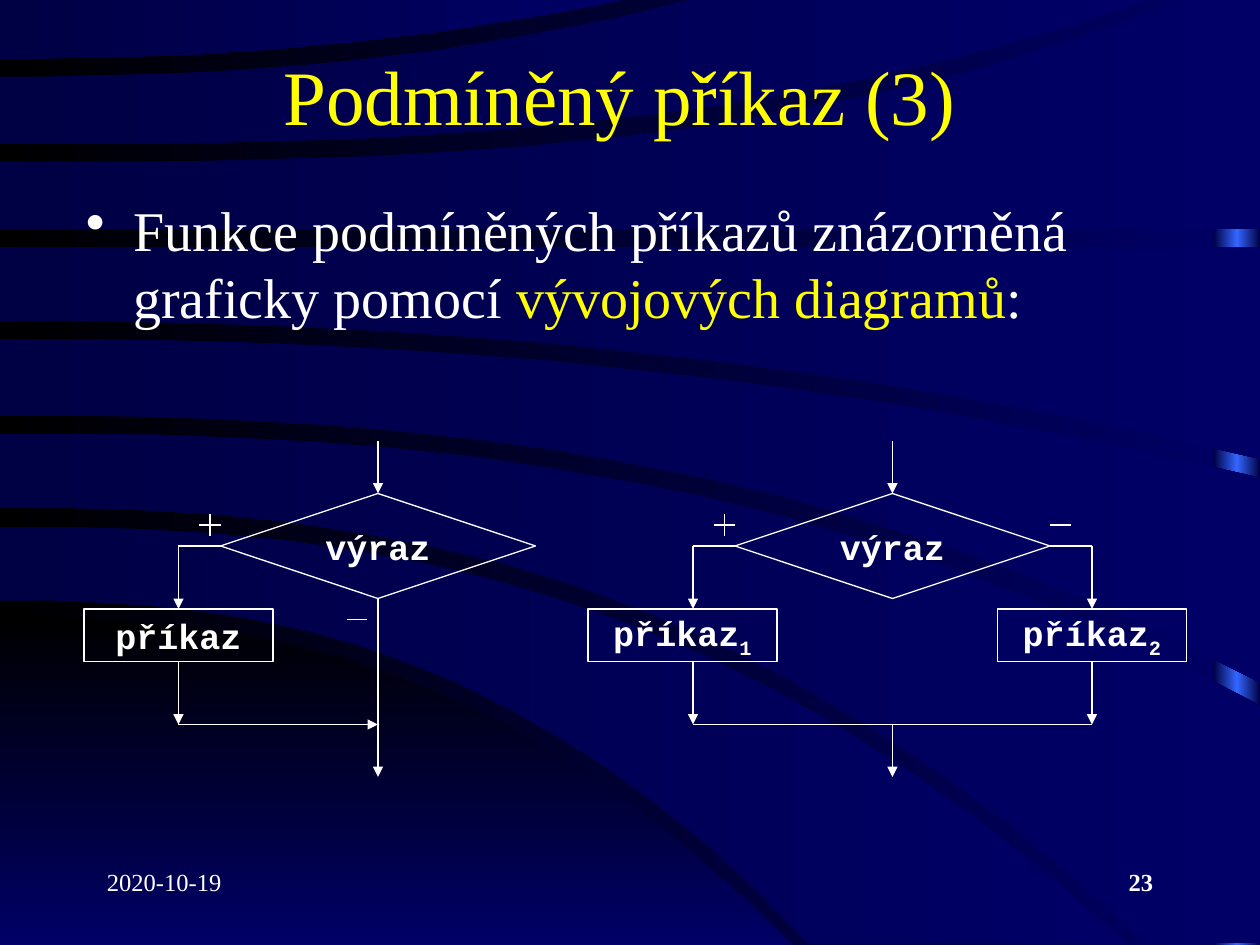
from collections import namedtuple
from copy import deepcopy

from lxml.etree import SubElement
from pptx import Presentation
from pptx.dml.color import RGBColor
from pptx.enum.shapes import MSO_CONNECTOR, MSO_SHAPE
from pptx.enum.text import MSO_ANCHOR, PP_ALIGN
from pptx.oxml.ns import qn
from pptx.util import Emu, Pt

PX = 7620  # EMU per px, 120 px to the inch
WIDTH, HEIGHT = 1200, 900
WHITE, YELLOW = "FFFFFF", "FFFF00"
BLACK, NAVY, DARK_NAVY, GLOW = "000000", "000066", "000044", "3366FF"
SERIF, MONO = "Times New Roman", "Courier New"
STEPS = 16  # straight pieces in each curved edge

# An edge leaves the left side at height start and bends to (x, y)
Edge = namedtuple("Edge", "start x y power", defaults=[2.5])

# Upper and lower edges of the hill and of the bands above it
HILL = Edge(589, 754, HEIGHT), Edge(HEIGHT, 754, HEIGHT)
BANDS = [
    (Edge(502, 1072, 898), Edge(572, 770, 898)),
    (Edge(413, WIDTH, 672), Edge(484, 1091, 898)),
    (Edge(323, WIDTH, 455, 2.2), Edge(396, WIDTH, 650)),
    (Edge(235, WIDTH, 235), Edge(306, WIDTH, 437, 2.2)),
    (Edge(154, 1132, -2, 2.9), Edge(218, WIDTH, 218)),
    (Edge(73, 667, -2, 2.3), Edge(137, 1100, -2, 2.8)),
    (Edge(-2, 601, -2), Edge(56, 601, -2, 2.2)),
]


def px(*lengths):
    return [Emu(length * PX) for length in lengths]


def color(hex_string):
    return RGBColor.from_string(hex_string)


def set_gradient(fill, first, last, angle=0):
    fill.gradient()
    fill.gradient_angle = angle
    for stop, hex_string in zip(fill.gradient_stops, (first, last)):
        stop.color.rgb = color(hex_string)


def add_glow(slide):
    """Strip at the right edge, bright in the middle."""
    shape = slide.shapes.add_shape(MSO_SHAPE.RECTANGLE, *px(1156, 0, 44, HEIGHT))
    shape.shadow.inherit = False
    shape.line.fill.background()
    set_gradient(shape.fill, DARK_NAVY, DARK_NAVY)
    first_stop = next(shape._element.iter(qn("a:gs")))
    first_stop.addnext(deepcopy(first_stop))
    middle = shape.fill.gradient_stops[1]
    middle.position = 0.5
    middle.color.rgb = color(GLOW)


def edge_points(edge):
    shares = [step / STEPS for step in range(STEPS + 1)]
    return [(round(edge.x * share),
             round(edge.start + (edge.y - edge.start) * share ** edge.power))
            for share in shares]


def add_band(slide, upper, lower, first, last, angle=0):
    """Area between two edges, with a square corner where they end apart."""
    corner = max(upper.x, lower.x), min(upper, lower, key=lambda edge: edge.x).y
    points = edge_points(upper) + [corner] + edge_points(lower)[::-1]
    builder = slide.shapes.build_freeform(*points[0], scale=PX)
    builder.add_line_segments(points[1:], close=True)
    shape = builder.convert_to_shape()
    shape.shadow.inherit = False
    shape.line.fill.background()
    set_gradient(shape.fill, first, last, angle)


def style(font, size, name, hex_string=WHITE, bold=False):
    font.size, font.name, font.bold = Pt(size), name, bold
    font.color.rgb = color(hex_string)


def add_text(slide, box, text, size, hex_string=WHITE, align=PP_ALIGN.LEFT,
             anchor=MSO_ANCHOR.TOP, bold=False):
    frame = slide.shapes.add_textbox(*px(*box)).text_frame
    frame.word_wrap = True
    frame.vertical_anchor = anchor
    paragraph = frame.paragraphs[0]
    paragraph.text = text
    paragraph.alignment = align
    style(paragraph.font, size, SERIF, hex_string, bold)
    return paragraph


def add_bullet(slide, box, parts):
    paragraph = add_text(slide, box, "", 32)
    paragraph.space_before = Pt(6.4)
    properties = paragraph._p.get_or_add_pPr()
    properties.set("marL", str(45 * PX))
    properties.set("indent", str(-45 * PX))
    SubElement(properties, qn("a:buChar")).set("char", "•")
    # The bullet character has to come before the default run properties
    properties.append(properties.find(qn("a:defRPr")))
    for text, hex_string in parts:
        run = paragraph.add_run()
        run.text = text
        style(run.font, 32, SERIF, hex_string)


def add_node(slide, kind, box, text, subscript=""):
    shape = slide.shapes.add_shape(kind, *px(*box))
    shape.shadow.inherit = False
    shape.fill.background()
    shape.line.color.rgb = color(WHITE)
    shape.line.width = Pt(0.75)
    frame = shape.text_frame
    frame.word_wrap = False
    frame.vertical_anchor = MSO_ANCHOR.MIDDLE
    paragraph = frame.paragraphs[0]
    paragraph.alignment = PP_ALIGN.CENTER
    style(paragraph.font, 20, MONO, bold=True)
    paragraph.add_run().text = text
    if subscript:
        run = paragraph.add_run()
        run.text = subscript
        run._r.get_or_add_rPr().set("baseline", "-25000")
    return shape


def find_site(nodes, point):
    """Node and side whose middle lies at the point, if there is one."""
    target = tuple(px(*point))
    for node in nodes:
        left, top, width, height = node.left, node.top, node.width, node.height
        middle_x, middle_y = left + width // 2, top + height // 2
        sides = [(middle_x, top), (left, middle_y),
                 (middle_x, top + height), (left + width, middle_y)]
        if target in sides:
            return node, sides.index(target)
    return None


def add_line(slide, start, end, nodes=(), arrow=False):
    connector = slide.shapes.add_connector(MSO_CONNECTOR.STRAIGHT, *px(*start, *end))
    connector.line.color.rgb = color(WHITE)
    connector.line.width = Pt(0.75)
    properties = connector._element.spPr
    if arrow:
        SubElement(properties.find(qn("a:ln")), qn("a:tailEnd")).set("type", "triangle")
    SubElement(properties, qn("a:effectLst"))
    for point, connect in ((start, connector.begin_connect), (end, connector.end_connect)):
        site = find_site(nodes, point)
        if site:
            connect(*site)


def add_sign(slide, x, y, plus=False):
    add_line(slide, (x - 10, y), (x + 10, y))
    if plus:
        add_line(slide, (x, y - 10), (x, y + 10))


def add_flowchart(slide, center, branches):
    """Decision with branches given as (line x, box left, subscript)."""
    nodes = [add_node(slide, MSO_SHAPE.FLOWCHART_DECISION, (center - 150, 470, 300, 100), "výraz")]
    add_line(slide, (center, 420), (center, 470), nodes, arrow=True)
    for x, left, subscript in branches:
        nodes.append(add_node(slide, MSO_SHAPE.RECTANGLE, (left, 580, 180, 50), "příkaz", subscript))
        corner = center - 150 if x < center else center + 150
        add_line(slide, (corner, 520), (x, 520), nodes)
        add_line(slide, (x, 520), (x, 580), nodes, arrow=True)
        add_line(slide, (x, 630), (x, 690), nodes, arrow=True)
    two_way = len(branches) == 2
    add_line(slide, (center, 690 if two_way else 570), (center, 740), nodes, arrow=True)
    add_line(slide, (center - 190, 690), (center + 190 if two_way else center, 690),
             arrow=not two_way)
    add_sign(slide, center - 160, 500, plus=True)
    add_sign(slide, *((center + 160, 500) if two_way else (center - 20, 590)))


def main():
    presentation = Presentation()
    presentation.slide_width, presentation.slide_height = px(WIDTH, HEIGHT)
    slide = presentation.slides.add_slide(presentation.slide_layouts[6])

    # Backdrop
    set_gradient(slide.background.fill, BLACK, NAVY)
    add_glow(slide)
    add_band(slide, *HILL, BLACK, NAVY, angle=270)
    for upper, lower in BANDS:
        add_band(slide, upper, lower, DARK_NAVY, NAVY)

    # Footer, title and body
    add_text(slide, (90, 820, 250, 60), "2020-10-19", 14)
    add_text(slide, (860, 820, 250, 60), "23", 14, align=PP_ALIGN.RIGHT, bold=True)
    add_text(slide, (70, 40, 1040, 100), "Podmíněný příkaz (3)", 44, YELLOW,
             PP_ALIGN.CENTER, MSO_ANCHOR.MIDDLE)
    add_bullet(slide, (70, 180, 1040, 190), [
        ("Funkce podmíněných příkazů znázorněná graficky pomocí ", WHITE),
        ("vývojových diagramů", YELLOW), (":", WHITE)])

    # Flowcharts
    add_flowchart(slide, 850, [(660, 560, "1"), (1040, 950, "2")])
    add_flowchart(slide, 360, [(170, 80, "")])

    presentation.save("out.pptx")


if __name__ == "__main__":
    main()
